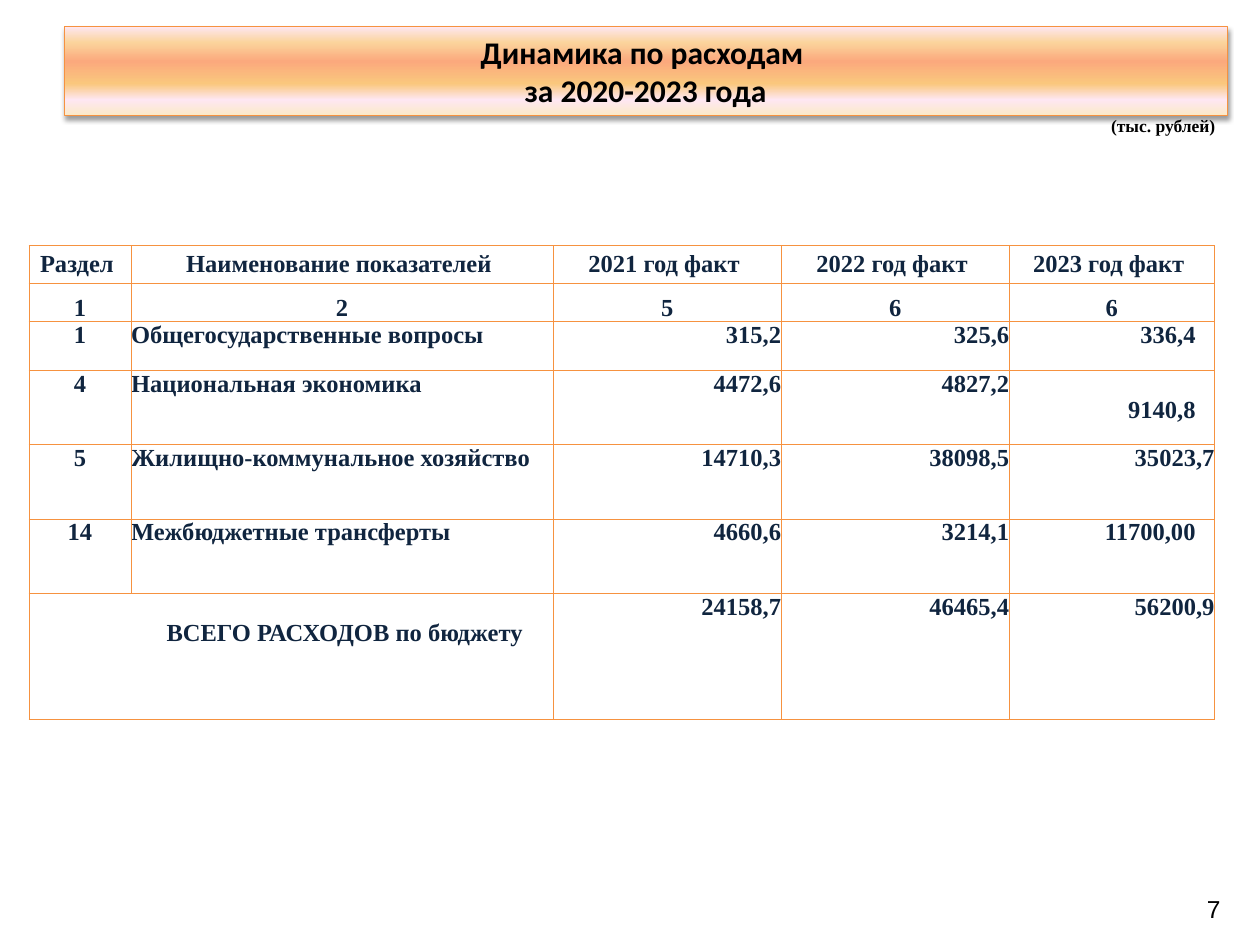
from dataclasses import dataclass

from pptx import Presentation
from pptx.dml.color import RGBColor
from pptx.enum.text import MSO_ANCHOR as Anchor, MSO_AUTO_SIZE as AutoSize, PP_ALIGN as Align
from pptx.oxml import parse_xml
from pptx.oxml.ns import nsdecls
from pptx.util import Inches, Pt

BLACK = RGBColor(0x00, 0x00, 0x00)
WHITE = RGBColor(0xFF, 0xFF, 0xFF)
NAVY = RGBColor(0x10, 0x25, 0x3F)
ORANGE = RGBColor(0xF6, 0x92, 0x40)
BANNER_STOPS = (
    (0, RGBColor(0xFB, 0xEA, 0xC7)),
    (18, RGBColor(0xFE, 0xE7, 0xF2)),
    (36, RGBColor(0xFA, 0xC7, 0x7D)),
    (61, RGBColor(0xFB, 0xA9, 0x7D)),
    (82, RGBColor(0xFB, 0xD4, 0x9C)),
    (100, RGBColor(0xFE, 0xE7, 0xF2)),
)
SERIF = "Times New Roman"
COLUMN_WIDTHS = (0.81, 3.35, 1.81, 1.81, 1.63)
BODY_ALIGNMENTS = (Align.CENTER, Align.LEFT, Align.RIGHT, Align.RIGHT, Align.RIGHT)
CENTERED = (Align.CENTER,) * 5
LINE_HEIGHT = 0.21
TRAILING_GAP = 0.15


@dataclass(frozen=True)
class Row:
    height: float
    texts: tuple[str, ...]
    alignments: tuple[Align, ...] = BODY_ALIGNMENTS
    anchor: Anchor = Anchor.TOP


@dataclass(frozen=True)
class Padding:
    left: float = 0
    top: float = 0
    right: float = 0


@dataclass(frozen=True)
class Label:
    text: str
    left: float
    top: float
    width: float
    height: float
    font_name: str
    size: int
    bold: bool
    wrap: bool


ROWS = (
    Row(0.3, ("Раздел ", "Наименование показателей ", "2021 год факт ", "2022 год факт ",
              "2023 год факт "), CENTERED, Anchor.MIDDLE),
    Row(0.3, ("1", "2", "5", "6", "6"), CENTERED, Anchor.BOTTOM),
    Row(0.39, ("1", "Общегосударственные вопросы", "315,2", "325,6", "336,4")),
    Row(0.59, ("4", "Национальная экономика", "4472,6", "4827,2", "9140,8")),
    Row(0.59, ("5", "Жилищно-коммунальное хозяйство", "14710,3", "38098,5", "35023,7")),
    Row(0.59, ("14", "Межбюджетные трансферты", "4660,6", "3214,1", "11700,00")),
    Row(1, ("ВСЕГО РАСХОДОВ по бюджету ", "", "24158,7", "46465,4", "56200,9")),
)
PADDINGS = {
    (2, 4): Padding(right=TRAILING_GAP),
    (3, 4): Padding(top=LINE_HEIGHT, right=TRAILING_GAP),
    (5, 4): Padding(right=TRAILING_GAP),
    (6, 0): Padding(left=0.9, top=LINE_HEIGHT),
}
LABELS = (
    Label("(тыс. рублей)", 8.72, 0.86, 1.28, 0.27, SERIF, 10, True, True),
    Label("7", 9.48, 7.05, 0.42, 0.34, "Arial", 14, False, False),
)


def format_font(font, name: str, size: int, color: RGBColor, bold: bool) -> None:
    font.name = name
    font.size = Pt(size)
    font.color.rgb = color
    font.bold = bold


def format_title(title) -> None:
    title.left, title.top = Inches(0.51), Inches(0.21)
    title.width, title.height = Inches(9.23), Inches(0.71)
    title.fill.gradient()
    title.fill.gradient_angle = 90
    stops = "".join(
        f'<a:gs pos="{position * 1000}"><a:srgbClr val="{color}"/></a:gs>'
        for position, color in BANNER_STOPS
    )
    properties = title.element.spPr
    stop_list = properties.find(".//{*}gsLst")
    stop_list.getparent().replace(
        stop_list, parse_xml(f'<a:gsLst {nsdecls("a")}>{stops}</a:gsLst>')
    )
    title.line.color.rgb = ORANGE
    title.line.width = Pt(0.75)
    properties.append(parse_xml(
        f'<a:effectLst {nsdecls("a")}>'
        f'<a:outerShdw blurRad="{Pt(3.1)}" dist="{Pt(1.6)}" dir="5400000" rotWithShape="0">'
        f'<a:srgbClr val="{BLACK}"><a:alpha val="38000"/></a:srgbClr>'
        '</a:outerShdw></a:effectLst>'
    ))
    frame = title.text_frame
    frame.text = "Динамика по расходам \vза 2020-2023 года"
    frame.word_wrap = True
    frame.auto_size = AutoSize.NONE
    frame.vertical_anchor = Anchor.MIDDLE
    paragraph = frame.paragraphs[0]
    paragraph.alignment = Align.CENTER
    format_font(paragraph.font, "Calibri", 18, BLACK, True)


def add_label(slide, label: Label) -> None:
    box = slide.shapes.add_textbox(
        Inches(label.left), Inches(label.top), Inches(label.width), Inches(label.height)
    )
    frame = box.text_frame
    frame.word_wrap = label.wrap
    frame.auto_size = AutoSize.SHAPE_TO_FIT_TEXT
    frame.text = label.text
    format_font(frame.paragraphs[0].font, label.font_name, label.size, BLACK, label.bold)


def add_borders(cell) -> None:
    properties = cell._tc.get_or_add_tcPr()
    for index, side in enumerate(("lnL", "lnR", "lnT", "lnB")):
        properties.insert(index, parse_xml(
            f'<a:{side} {nsdecls("a")} w="{Pt(0.5)}"><a:solidFill>'
            f'<a:srgbClr val="{ORANGE}"/></a:solidFill></a:{side}>'
        ))


def format_cell(cell, text: str, alignment: Align, anchor: Anchor, padding: Padding) -> None:
    cell.fill.solid()
    cell.fill.fore_color.rgb = WHITE
    cell.margin_left, cell.margin_top = Inches(padding.left), Inches(padding.top)
    cell.margin_right, cell.margin_bottom = Inches(padding.right), 0
    cell.vertical_anchor = anchor
    cell.text = text
    paragraph = cell.text_frame.paragraphs[0]
    paragraph.alignment = alignment
    format_font(paragraph.font, SERIF, 14, NAVY, True)
    add_borders(cell)


def add_expense_table(slide) -> None:
    table = slide.shapes.add_table(
        len(ROWS), len(COLUMN_WIDTHS), Inches(0.23), Inches(1.95),
        Inches(sum(COLUMN_WIDTHS)), Inches(sum(row.height for row in ROWS)),
    ).table
    table.first_row = False
    table.horz_banding = False
    for column, width in zip(table.columns, COLUMN_WIDTHS):
        column.width = Inches(width)
    for row_index, row in enumerate(ROWS):
        table.rows[row_index].height = Inches(row.height)
        for column_index, (text, alignment) in enumerate(zip(row.texts, row.alignments)):
            format_cell(
                table.cell(row_index, column_index), text, alignment, row.anchor,
                PADDINGS.get((row_index, column_index), Padding()),
            )
    total_row = len(ROWS) - 1
    table.cell(total_row, 0).merge(table.cell(total_row, 1))


def main() -> None:
    presentation = Presentation()
    presentation.slide_width = Inches(10)
    presentation.slide_height = Inches(7.5)
    slide = presentation.slides.add_slide(presentation.slide_layouts.get_by_name("Title Only"))
    format_title(slide.shapes.title)
    for label in LABELS:
        add_label(slide, label)
    add_expense_table(slide)
    presentation.save("out.pptx")


if __name__ == "__main__":
    main()
